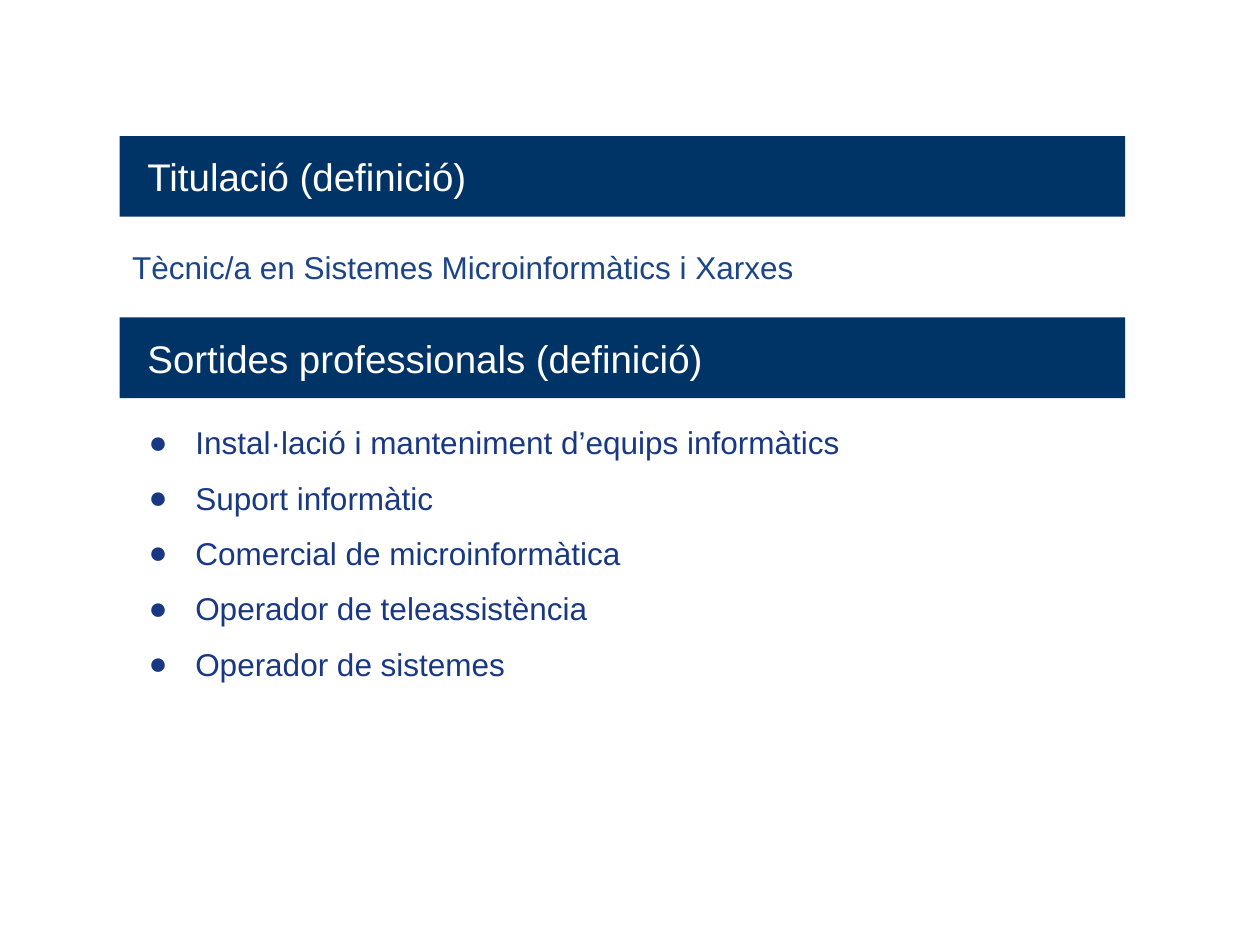
from lxml.etree import SubElement as Sub
from pptx import Presentation as Deck
from pptx.dml.color import RGBColor as RGB
from pptx.enum.shapes import MSO_SHAPE as Kind
from pptx.enum.text import MSO_ANCHOR as Anchor, MSO_AUTO_SIZE as Fit, PP_ALIGN as Align
from pptx.oxml.ns import qn
from pptx.util import Inches, Pt

NAVY = RGB(0x00, 0x33, 0x66)
WHITE = RGB(0xFF, 0xFF, 0xFF)
BLUE = RGB(0x1C, 0x45, 0x87)
INDIGO = RGB(0x18, 0x38, 0x83)

LEFT, WIDTH = 0.95, 7.98
BAR = 0.64


class Page:
    """Holds the style and the current slide."""
    font = "Arial"
    head, body = Pt(22), Pt(18)

    def __init__(self, deck):
        self.slide = deck.slides.add_slide(deck.slide_layouts[1])
        self.shapes = self.slide.shapes

    def place(self, shape, top, height):
        box = {"left": LEFT, "top": top, "width": WIDTH, "height": height}
        for name, value in box.items():
            setattr(shape, name, Inches(value))

    def frame(self, shape, anchor=Anchor.TOP, inset=0.1):
        form = {
            "word_wrap": True, "auto_size": Fit.NONE, "vertical_anchor": anchor,
            "margin_left": Inches(inset), "margin_right": Inches(0.1),
            "margin_top": Inches(0.05), "margin_bottom": Inches(0.05),
        }
        for name, value in form.items():
            setattr(shape.text_frame, name, value)
        return shape.text_frame

    def label(self, para, text, size, color, align):
        para.alignment = align
        run = para.add_run()
        run.text = text
        for name, value in {"name": self.font, "size": size, "bold": False}.items():
            setattr(run.font, name, value)
        run.font.color.rgb = color

    def bar(self, shape, text, top):
        self.place(shape, top, BAR)
        shape.fill.solid()
        shape.fill.fore_color.rgb = NAVY
        para = self.frame(shape, Anchor.MIDDLE, 0.22).paragraphs[0]
        self.label(para, text, self.head, WHITE, Align.LEFT)

    def title(self, text, top):
        self.bar(self.shapes.title, text, top)

    def band(self, text, top):
        shape = self.shapes.add_shape(Kind.RECTANGLE, 0, 0, 0, 0)
        shape.shadow.inherit = False
        shape.line.fill.background()
        self.bar(shape, text, top)

    def note(self, text, top, height):
        shape = self.shapes.add_textbox(0, 0, 0, 0)
        self.place(shape, top, height)
        para = self.frame(shape).paragraphs[0]
        self.label(para, text, self.body, BLUE, Align.JUSTIFY)

    def bullet(self, para):
        props = para._p.get_or_add_pPr()
        props.set("marL", str(Inches(0.5)))
        props.set("indent", str(Inches(-0.37)))
        tint = Sub(props, qn("a:buClr"))
        Sub(tint, qn("a:srgbClr"), val=str(INDIGO))
        Sub(props, qn("a:buFont"), typeface=self.font)
        Sub(props, qn("a:buChar"), char="●")

    def items(self, lines, top, height):
        shape = self.slide.placeholders[1]
        self.place(shape, top, height)
        text = self.frame(shape)
        for i, line in enumerate(lines):
            para = text.add_paragraph() if i else text.paragraphs[0]
            para.space_before = Pt(10 if i else 0)
            self.bullet(para)
            self.label(para, line, self.body, INDIGO, Align.JUSTIFY)


def main():
    deck = Deck()
    deck.slide_width, deck.slide_height = Inches(10), Inches(7.5)
    page = Page(deck)

    # Degree
    page.title("Titulació (definició)", 1.08)
    page.note("Tècnic/a en Sistemes Microinformàtics i Xarxes", 1.92, 0.45)

    # Career paths
    page.band("Sortides professionals (definició)", 2.52)
    page.items([
        "Instal·lació i manteniment d’equips informàtics",
        "Suport informàtic",
        "Comercial de microinformàtica",
        "Operador de teleassistència",
        "Operador de sistemes",
    ], 3.31, 3.26)

    deck.save("out.pptx")


if __name__ == "__main__":
    main()
